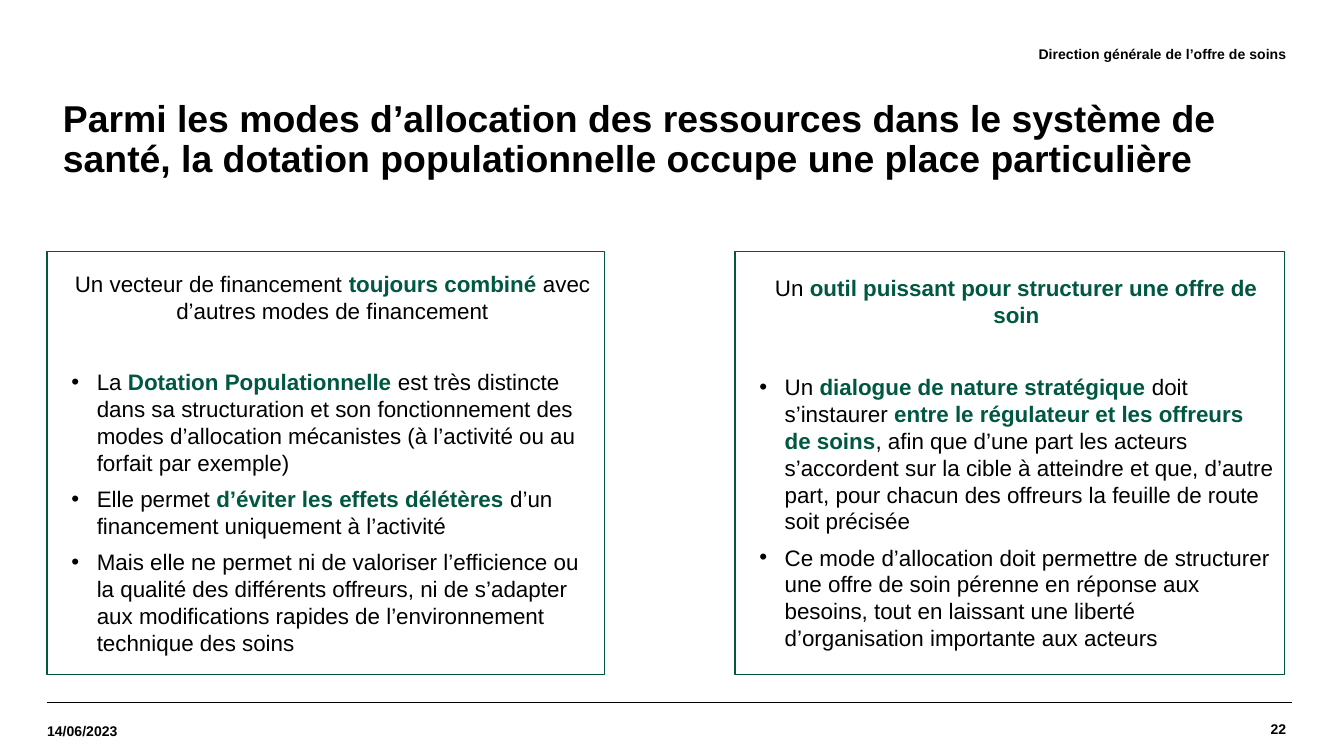
from lxml import etree
from pptx import Presentation
from pptx.dml.color import RGBColor
from pptx.enum.shapes import MSO_CONNECTOR, MSO_SHAPE
from pptx.enum.text import MSO_ANCHOR, PP_ALIGN
from pptx.oxml.ns import qn
from pptx.util import Cm, Pt

LEFT, CENTER, RIGHT = PP_ALIGN.LEFT, PP_ALIGN.CENTER, PP_ALIGN.RIGHT
BLACK, GREEN = "000000", "005841"
FONT = "Arial"

TITLE = ("Parmi les modes d’allocation des ressources dans le système de santé, "
         "la dotation populationnelle occupe une place particulière")

# text, left, top, width, height (cm), alignment
LABELS = [
    ("22", 20.55, 13.28, 3.76, 0.99, RIGHT),
    ("14/06/2023", 0.89, 13.34, 3.35, 0.97, LEFT),
    ("Direction générale de l’offre de soins", 7.98, 0.53, 16.33, 0.99, RIGHT),
]

# Odd-numbered pieces of a text split at "*" are green and bold
PANELS = [
    {"left": 0.89, "width": 10.54,
     "heading": "Un vecteur de financement *toujours combiné *avec d’autres modes de financement",
     "bullets": [
         "La *Dotation Populationnelle *est très distincte dans sa structuration et son "
         "fonctionnement des modes d’allocation mécanistes (à l’activité ou au forfait par exemple)",
         "Elle permet *d’éviter les effets délétères *d’un financement uniquement à l’activité",
         "Mais elle ne permet ni de valoriser l’efficience ou la qualité des différents offreurs, "
         "ni de s’adapter aux modifications rapides de l’environnement technique des soins",
     ]},
    {"left": 13.89, "width": 10.39,
     "heading": "Un *outil puissant pour structurer une offre de soin",
     "bullets": [
         "Un *dialogue de nature stratégique *doit s’instaurer *entre le régulateur et les "
         "offreurs de soins*, afin que d’une part les acteurs s’accordent sur la cible à atteindre "
         "et que, d’autre part, pour chacun des offreurs la feuille de route soit précisée",
         "Ce mode d’allocation doit permettre de structurer une offre de soin pérenne en réponse "
         "aux besoins, tout en laissant une liberté d’organisation importante aux acteurs",
     ]},
]
PANEL_TOP, PANEL_HEIGHT = 4.75, 8.0
RULE_Y, RULE_WIDTH, RULE_LEFTS = 13.28, 23.42, (0.89, 0.99)


def rgb(value):
    return RGBColor.from_string(value)


def write(p, text, size=12, bold=False, align=LEFT, indent=0, hanging=0,
          bullet=None, after=0, spacing=None):
    """Fill a paragraph, with pieces between asterisks green and bold."""
    p.alignment = align
    p.space_after = Pt(after)
    if spacing:
        p.line_spacing = spacing
    pPr = p._p.get_or_add_pPr()
    pPr.set("marL", str(Cm(indent)))
    pPr.set("indent", str(-Cm(hanging)))
    if bullet:
        etree.SubElement(pPr, qn("a:buFont")).set("typeface", FONT)
        etree.SubElement(pPr, qn("a:buChar")).set("char", bullet)
    for i, piece in enumerate(text.split("*")):
        strong = i % 2 == 1
        r = p.add_run()
        r.text = piece
        r.font.name, r.font.size = FONT, Pt(size)
        r.font.bold = bold or strong
        r.font.color.rgb = rgb(GREEN if strong else BLACK)


def prepare(sp, inset_x, inset_y):
    tf = sp.text_frame
    tf.word_wrap = True
    tf.vertical_anchor = MSO_ANCHOR.MIDDLE
    tf.margin_left = tf.margin_right = Cm(inset_x)
    tf.margin_top = tf.margin_bottom = Cm(inset_y)
    return tf


def add_panel(s, left, width, heading, bullets):
    sp = s.shapes.add_shape(MSO_SHAPE.RECTANGLE, Cm(left), Cm(PANEL_TOP),
                            Cm(width), Cm(PANEL_HEIGHT))
    sp.shadow.inherit = False
    sp.fill.background()
    sp.line.color.rgb = rgb(GREEN)
    sp.line.width = Pt(0.75)
    tf = prepare(sp, 0.2, 0.2)
    write(tf.paragraphs[0], heading, align=CENTER, indent=0.25, after=24)
    for text in bullets:
        write(tf.add_paragraph(), text, indent=0.74, hanging=0.48, bullet="•", after=5)


def add_rule(s, left):
    line = s.shapes.add_connector(MSO_CONNECTOR.STRAIGHT, Cm(left), Cm(RULE_Y),
                                  Cm(left + RULE_WIDTH), Cm(RULE_Y))
    line.line.color.rgb = rgb(BLACK)
    line.line.width = Pt(0.8)
    etree.SubElement(line._element.spPr, qn("a:effectLst"))


prs = Presentation()
prs.slide_width, prs.slide_height = Cm(25.4), Cm(14.29)
s = prs.slides.add_slide(prs.slide_layouts[6])

for left in RULE_LEFTS:
    add_rule(s, left)

title = s.shapes.add_textbox(Cm(0.89), Cm(1.91), Cm(23.4), Cm(1.5))
write(prepare(title, 0.25, 0.13).paragraphs[0], TITLE, size=20, bold=True,
      indent=0.05, spacing=0.9)

for panel in PANELS:
    add_panel(s, **panel)

for text, left, top, width, height, align in LABELS:
    box = s.shapes.add_textbox(Cm(left), Cm(top), Cm(width), Cm(height))
    write(prepare(box, 0, 0).paragraphs[0], text, size=7.5, bold=True, align=align)

prs.save("out.pptx")
